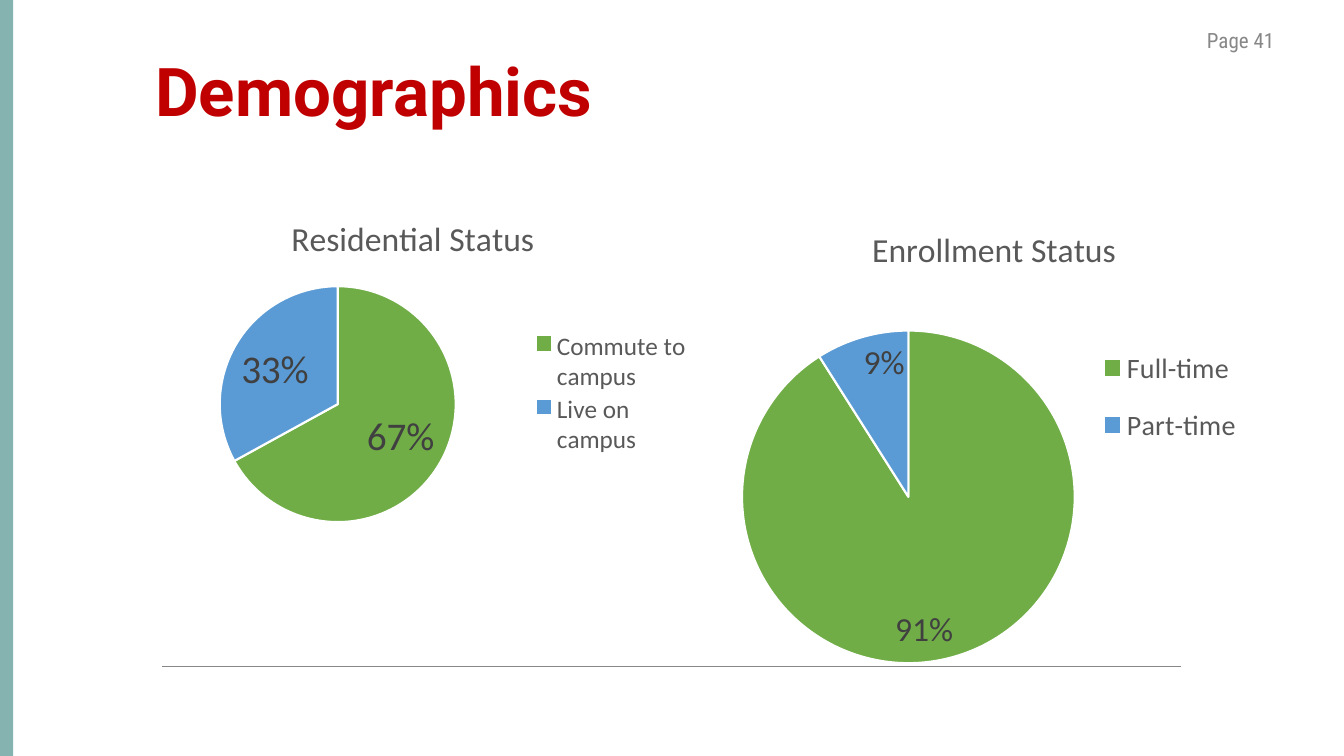
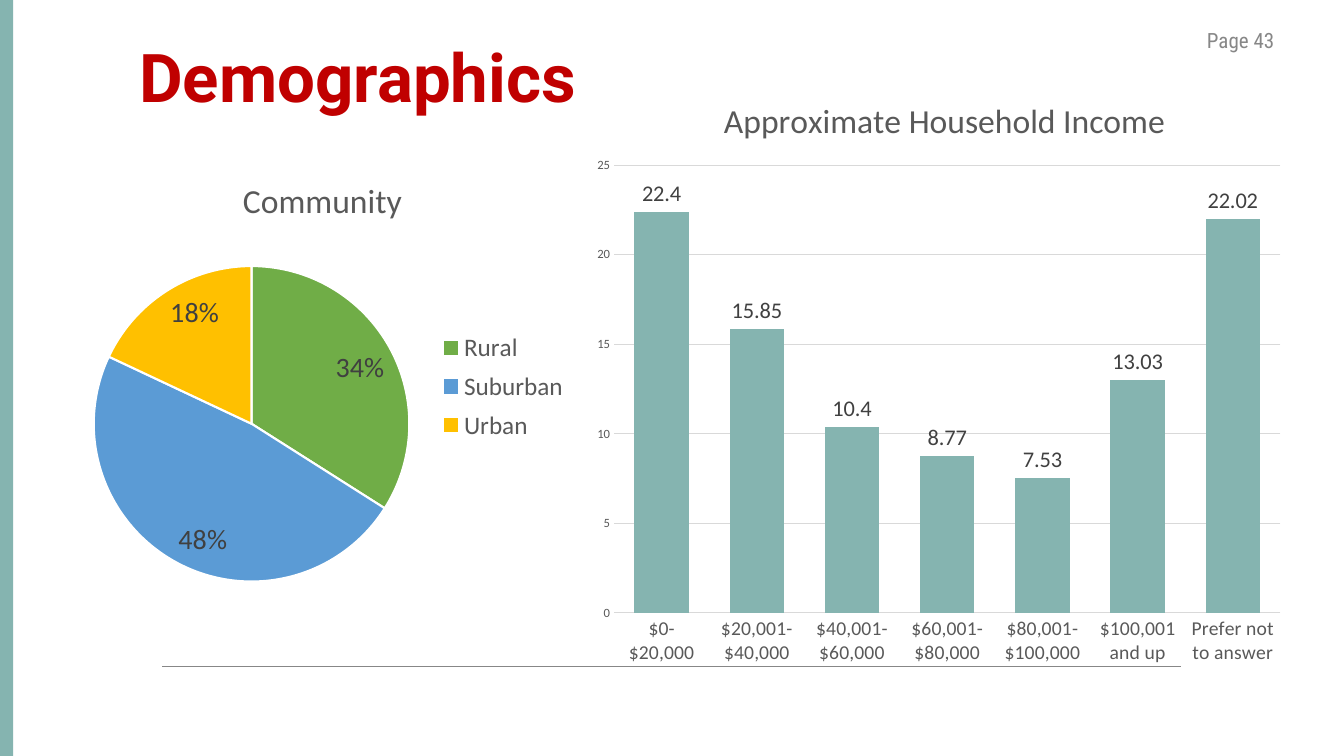
"""Build two slides of survey demographics with native charts."""
from dataclasses import dataclass
from typing import Any, NamedTuple, Optional

from pptx import Presentation
from pptx.chart.chart import Chart
from pptx.chart.data import CategoryChartData
from pptx.dml.color import RGBColor
from pptx.enum.chart import XL_CHART_TYPE, XL_LABEL_POSITION, XL_LEGEND_POSITION, XL_TICK_MARK
from pptx.enum.shapes import MSO_CONNECTOR, MSO_SHAPE
from pptx.enum.text import MSO_ANCHOR, MSO_AUTO_SIZE, PP_ALIGN
from pptx.oxml import parse_xml
from pptx.oxml.ns import nsdecls
from pptx.slide import Slide
from pptx.util import Inches, Pt

PIE = XL_CHART_TYPE.PIE
COLUMN = XL_CHART_TYPE.COLUMN_CLUSTERED
INSIDE_END = XL_LABEL_POSITION.INSIDE_END
OUTSIDE_END = XL_LABEL_POSITION.OUTSIDE_END
LEGEND_RIGHT = XL_LEGEND_POSITION.RIGHT
NO_TICK = XL_TICK_MARK.NONE
STRAIGHT = MSO_CONNECTOR.STRAIGHT
RECTANGLE = MSO_SHAPE.RECTANGLE
MIDDLE = MSO_ANCHOR.MIDDLE
NO_AUTOFIT = MSO_AUTO_SIZE.NONE
LEFT, CENTER = PP_ALIGN.LEFT, PP_ALIGN.CENTER

TEAL = RGBColor(0x85, 0xB4, 0xB0)
RED = RGBColor(0xC0, 0x00, 0x00)
GREEN = RGBColor(0x70, 0xAD, 0x47)
BLUE = RGBColor(0x5B, 0x9B, 0xD5)
GOLD = RGBColor(0xFF, 0xC0, 0x00)
GRAY = RGBColor(0x87, 0x87, 0x87)
GRID = RGBColor(0xD9, 0xD9, 0xD9)
TEXT = RGBColor(0x59, 0x59, 0x59)
LABEL = RGBColor(0x40, 0x40, 0x40)
BLACK = RGBColor(0x00, 0x00, 0x00)
WHITE = RGBColor(0xFF, 0xFF, 0xFF)
PIE_COLORS = (GREEN, BLUE, GOLD)

LAYOUT_TITLE_ONLY = 5
SLIDE_WIDTH, SLIDE_HEIGHT = 13.33, 7.5
TITLE_WIDTH, TITLE_HEIGHT = 7.53, 0.87
CHART_TITLE_OFFSET = 0.24


class Box(NamedTuple):
    """A rectangle in inches."""
    left: float
    top: float
    width: float
    height: float


@dataclass(frozen=True)
class ChartPlan:
    """Content and placement of one chart."""
    title: str
    title_left: float
    frame: Box
    plot: Box
    values: dict[str, float]
    label_size: int
    legend: Optional[Box] = None
    legend_size: int = 18


@dataclass(frozen=True)
class SlidePlan:
    """Content of one slide."""
    page: str
    title: str
    title_left: float
    title_top: float
    charts: tuple[ChartPlan, ...]


SLIDES = (
    SlidePlan("Page 41", "Demographics", 1.44, 0.45, (
        ChartPlan("Residential Status", 2.83, Box(1.06, 1.84, 5.92, 4.53),
                  Box(2.18, 2.84, 2.34, 2.34),
                  {"Commute to campus": 67, "Live on campus": 33}, 28,
                  Box(5.26, 3.26, 1.6, 1.28)),
        ChartPlan("Enrollment Status", 8.59, Box(7.13, 1.95, 5.33, 4.77),
                  Box(7.36, 3.28, 3.3, 3.3),
                  {"Full-time": 91, "Part-time": 9}, 24,
                  Box(10.88, 3.26, 1.45, 1.35), 20),
    )),
    SlidePlan("Page 43", "Demographics", 1.28, 0.32, (
        ChartPlan("Community", 2.35, Box(0.49, 1.47, 5.29, 4.45),
                  Box(0.93, 2.64, 3.13, 3.13),
                  {"Rural": 34, "Suburban": 48, "Urban": 18}, 20,
                  Box(4.34, 3.22, 1.3, 1.23)),
        ChartPlan("Approximate Household Income", 7.12, Box(5.79, 0.67, 7.06, 6.05),
                  Box(6.09, 1.64, 6.61, 4.44),
                  {"$0-$20,000": 22.4, "$20,001-$40,000": 15.85, "$40,001-$60,000": 10.4,
                   "$60,001-$80,000": 8.77, "$80,001-$100,000": 7.53,
                   "$100,001 and up": 13.03, "Prefer not to answer": 22.02}, 16),
    )),
)


def apply_format(target: Any, values: dict[str, Any]) -> None:
    """Set every named attribute on the target."""
    for name, value in values.items():
        setattr(target, name, value)


def format_font(font: Any, size: float, color: RGBColor, name: str = "Calibri",
                bold: bool = False) -> None:
    """Set the face, size, weight and colour of a font."""
    apply_format(font, {"name": name, "size": Pt(size), "bold": bold})
    font.color.rgb = color


def format_line(line: Any, color: RGBColor, width: float) -> None:
    """Set the colour and width of a line."""
    line.color.rgb = color
    line.width = Pt(width)


def place(shape: Any, box: Box) -> None:
    """Move and size a shape."""
    names = ("left", "top", "width", "height")
    apply_format(shape, {name: Inches(value) for name, value in zip(names, box)})


def add_decoration(slide: Slide, page: str) -> None:
    """Draw the side band, the bottom rule and the page label."""
    band = slide.shapes.add_shape(RECTANGLE, 0, 0, Inches(0.13), Inches(SLIDE_HEIGHT))
    band.shadow.inherit = False
    band.fill.solid()
    band.fill.fore_color.rgb = TEAL
    band.line.fill.background()

    rule = slide.shapes.add_connector(STRAIGHT, Inches(1.61), Inches(6.61),
                                      Inches(11.71), Inches(6.61))
    format_line(rule.line, GRAY, 0.5)
    rule.element.spPr.append(parse_xml(f"<a:effectLst {nsdecls('a')}/>"))

    label = slide.shapes.add_textbox(Inches(11.68), Inches(0.2), Inches(1.25), Inches(0.4))
    apply_format(label.text_frame, {"word_wrap": True, "vertical_anchor": MIDDLE, "text": page})
    paragraph = label.text_frame.paragraphs[0]
    paragraph.alignment = CENTER
    format_font(paragraph.font, 15, GRAY, "Roboto Condensed")


def add_title(slide: Slide, plan: SlidePlan) -> None:
    """Fill and format the title placeholder."""
    title = slide.shapes.title
    place(title, Box(plan.title_left, plan.title_top, TITLE_WIDTH, TITLE_HEIGHT))
    apply_format(title.text_frame, {"text": plan.title, "word_wrap": True,
                                    "auto_size": NO_AUTOFIT, "vertical_anchor": MIDDLE})
    paragraph = title.text_frame.paragraphs[0]
    paragraph.alignment = LEFT
    format_font(paragraph.font, 48, RED, "Roboto", True)


def set_layout(chart: Chart, tag: str, index: int, frame: Box, left: float, top: float,
               size: Optional[tuple[float, float]] = None) -> None:
    """Pin a chart part at a slide position given in inches."""
    parent = chart.element.xpath(f"c:chart/c:{tag}")[0]
    for previous in parent.xpath("c:layout"):
        parent.remove(previous)
    target = '<c:layoutTarget val="inner"/>' if tag == "plotArea" else ""
    settings = {"xMode": "edge", "yMode": "edge",
                "x": (left - frame.left) / frame.width,
                "y": (top - frame.top) / frame.height}
    if size:
        settings |= {"w": size[0] / frame.width, "h": size[1] / frame.height}
    items = "".join(f'<c:{name} val="{value}"/>' for name, value in settings.items())
    parent.insert(index, parse_xml(
        f"<c:layout {nsdecls('c')}><c:manualLayout>{target}{items}</c:manualLayout></c:layout>"))


def format_pie(chart: Chart, plan: ChartPlan) -> None:
    """Colour the slices and place the legend of a pie."""
    chart.plots[0].vary_by_categories = True
    series = chart.plots[0].series[0]
    for index, color in zip(range(len(plan.values)), PIE_COLORS):
        point = series.points[index].format
        point.fill.solid()
        point.fill.fore_color.rgb = color
        format_line(point.line, WHITE, 1.5)
    if plan.legend:
        chart.has_legend = True
        apply_format(chart.legend, {"position": LEGEND_RIGHT, "include_in_layout": False})
        format_font(chart.legend.font, plan.legend_size, TEXT)
        set_layout(chart, "legend", 1, plan.frame, *plan.legend[:2], plan.legend[2:])


def format_columns(chart: Chart) -> None:
    """Style the columns, the axes and the grid."""
    apply_format(chart.plots[0], {"vary_by_categories": False, "gap_width": 75, "overlap": 40})
    fill = chart.plots[0].series[0].format.fill
    fill.solid()
    fill.fore_color.rgb = TEAL
    for axis, size in ((chart.category_axis, 14), (chart.value_axis, 9)):
        apply_format(axis, {"major_tick_mark": NO_TICK, "minor_tick_mark": NO_TICK})
        format_font(axis.tick_labels.font, size, TEXT)
    format_line(chart.category_axis.format.line, GRID, 0.75)
    apply_format(chart.value_axis, {"minimum_scale": 0, "maximum_scale": 25, "major_unit": 5,
                                    "has_major_gridlines": True})
    chart.value_axis.format.line.fill.background()
    format_line(chart.value_axis.major_gridlines.format.line, GRID, 0.75)


def add_chart(slide: Slide, plan: ChartPlan) -> None:
    """Add a pie when the plan has a legend, else a column chart."""
    is_pie = plan.legend is not None
    data = CategoryChartData()
    data.categories = list(plan.values)
    data.add_series("Series 1", list(plan.values.values()))
    chart = slide.shapes.add_chart(PIE if is_pie else COLUMN,
                                   *(Inches(value) for value in plan.frame), data).chart
    format_font(chart.font, 10, BLACK)
    chart.element.xpath("c:chart")[0].addnext(parse_xml(
        f"<c:spPr {nsdecls('c', 'a')}><a:noFill/><a:ln><a:noFill/></a:ln></c:spPr>"))

    chart.has_legend = False
    chart.has_title = True
    title = chart.chart_title.text_frame
    title.text = plan.title
    format_font(title.paragraphs[0].runs[0].font, 24, TEXT)
    set_layout(chart, "title", 1, plan.frame, plan.title_left, plan.frame.top + CHART_TITLE_OFFSET)
    set_layout(chart, "plotArea", 0, plan.frame, *plan.plot[:2], plan.plot[2:])

    plot = chart.plots[0]
    plot.has_data_labels = True
    apply_format(plot.data_labels, {
        "number_format": "0%" if is_pie else "General", "number_format_is_linked": False,
        "show_percentage": is_pie, "show_value": not is_pie,
        "position": INSIDE_END if is_pie else OUTSIDE_END})
    format_font(plot.data_labels.font, plan.label_size, LABEL)
    if is_pie:
        format_pie(chart, plan)
    else:
        format_columns(chart)


def main() -> None:
    """Build and save the presentation."""
    presentation = Presentation()
    presentation.slide_width = Inches(SLIDE_WIDTH)
    presentation.slide_height = Inches(SLIDE_HEIGHT)
    for plan in SLIDES:
        slide = presentation.slides.add_slide(presentation.slide_layouts[LAYOUT_TITLE_ONLY])
        add_decoration(slide, plan.page)
        add_title(slide, plan)
        for chart_plan in plan.charts:
            add_chart(slide, chart_plan)
    presentation.save("out.pptx")


if __name__ == "__main__":
    main()
